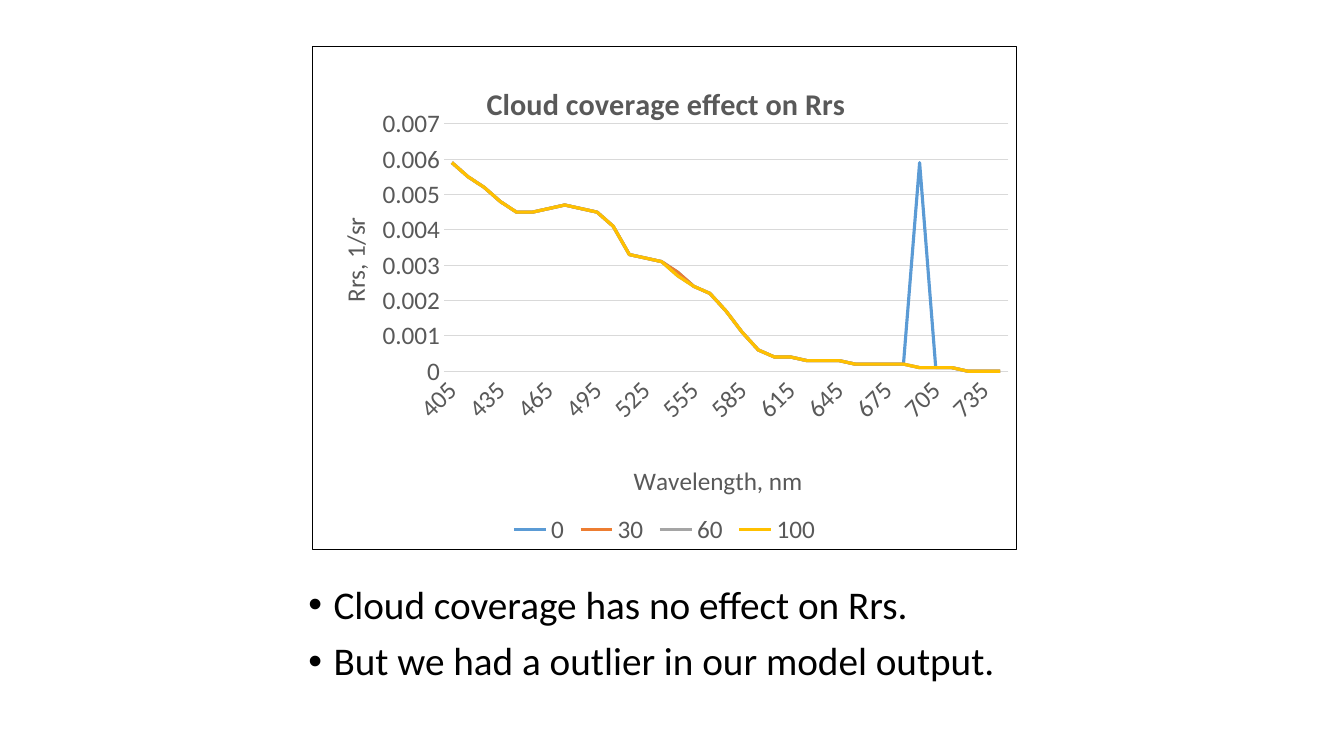
from dataclasses import dataclass

from lxml.etree import SubElement
from pptx import Presentation
from pptx.chart.data import CategoryChartData
from pptx.dml.color import RGBColor
from pptx.enum.chart import XL_CHART_TYPE as ChartType
from pptx.enum.chart import XL_LEGEND_POSITION as LegendPosition
from pptx.enum.chart import XL_TICK_MARK as TickMark
from pptx.oxml import parse_xml
from pptx.oxml.ns import nsdecls, qn
from pptx.util import Inches, Pt

BLACK = RGBColor(0x00, 0x00, 0x00)
GREY_TEXT = RGBColor(0x59, 0x59, 0x59)
GRID_GREY = RGBColor(0xD9, 0xD9, 0xD9)
BLUE = RGBColor(0x5B, 0x9B, 0xD5)
ORANGE = RGBColor(0xED, 0x7D, 0x31)
GREY = RGBColor(0xA5, 0xA5, 0xA5)
YELLOW = RGBColor(0xFF, 0xC0, 0x00)
FONT = "Calibri"

WAVELENGTHS = range(405, 746, 10)
# Rrs in units of 0.0001 1/sr
BASE_RRS = [59, 55, 52, 48, 45, 45, 46, 47, 46, 45, 41, 33, 32, 31, 28, 24, 22, 17,
            11, 6, 4, 4, 3, 3, 3, 2, 2, 2, 2, 1, 1, 1, 0, 0, 0]
BULLETS = [
    "Cloud coverage has no effect on Rrs.",
    "But we had a outlier in our model output.",
]


@dataclass(frozen=True)
class Coverage:
    percent: str
    color: RGBColor
    changes: dict[int, int]  # wavelength -> value differing from BASE_RRS

    def rrs(self) -> list[float]:
        return [round(self.changes.get(nm, base) / 10000, 4)
                for nm, base in zip(WAVELENGTHS, BASE_RRS)]


COVERAGES = [
    Coverage("0", BLUE, {695: 59}),
    Coverage("30", ORANGE, {}),
    Coverage("60", GREY, {545: 27}),
    Coverage("100", YELLOW, {545: 27}),
]


def style_font(font, size: float, color: RGBColor, bold: bool = False) -> None:
    font.name = FONT
    font.size = Pt(size)
    font.bold = bold
    font.color.rgb = color


def place(element, index: int, inner: bool = False, **fractions: float) -> None:
    """Give a chart part a manual layout in fractions of the chart."""
    for old in element.findall(qn("c:layout")):
        element.remove(old)
    layout = parse_xml(f"<c:layout {nsdecls('c')}><c:manualLayout/></c:layout>")
    manual = layout[0]
    if inner:
        SubElement(manual, qn("c:layoutTarget")).set("val", "inner")
    for side in ("x", "y"):
        SubElement(manual, qn(f"c:{side}Mode")).set("val", "edge")
    for side, fraction in fractions.items():
        SubElement(manual, qn(f"c:{side}")).set("val", str(fraction))
    element.insert(index, layout)


def add_title(owner, text: str, size: float, x: float, y: float,
              bold: bool = False, rotation: int = 0) -> None:
    """Title a chart or an axis; rotation is in degrees."""
    owner.has_title = True
    title = owner.chart_title if hasattr(owner, "chart_title") else owner.axis_title
    frame = title.text_frame
    run = frame.paragraphs[0].add_run()
    run.text = text
    style_font(run.font, size, GREY_TEXT, bold)
    body = title._element.find(f".//{qn('a:bodyPr')}")
    body.set("rot", str(rotation * 60000))
    body.set("vert", "horz")
    place(title._element, 1, x=x, y=y)


def add_border(chart, color: RGBColor) -> None:
    border = parse_xml(
        f"<c:spPr {nsdecls('c', 'a')}><a:noFill/><a:ln w=\"{Pt(0.75)}\"><a:solidFill>"
        f"<a:srgbClr val=\"{color}\"/></a:solidFill></a:ln></c:spPr>")
    chart._chartSpace.find(qn("c:chart")).addnext(border)


def add_rrs_chart(slide) -> None:
    data = CategoryChartData(number_format="General")
    data.categories = [str(nm) for nm in WAVELENGTHS]
    for coverage in COVERAGES:
        data.add_series(coverage.percent, coverage.rrs())
    chart = slide.shapes.add_chart(
        ChartType.LINE, Inches(3.09), Inches(0.46), Inches(7), Inches(5), data).chart
    style_font(chart.font, 18, BLACK)
    add_border(chart, BLACK)
    add_title(chart, "Cloud coverage effect on Rrs", 21.6, 0.24, 0.06, bold=True)

    plot = chart.plots[0]
    plot.vary_by_categories = False
    for series, coverage in zip(plot.series, COVERAGES):
        series.smooth = False
        series.format.line.color.rgb = coverage.color
        series.format.line.width = Pt(2.25)
    place(chart._chartSpace.find(f".//{qn('c:plotArea')}"), 0, inner=True,
          x=0.187, y=0.153, w=0.801, h=0.492)

    wavelength, rrs = chart.category_axis, chart.value_axis
    for axis in (wavelength, rrs):
        axis.major_tick_mark = axis.minor_tick_mark = TickMark.NONE
        style_font(axis.tick_labels.font, 18, GREY_TEXT)
    add_title(wavelength, "Wavelength, nm", 18, 0.45, 0.82)
    add_title(rrs, "Rrs, 1/sr", 18, 0.03, 0.33, rotation=-90)

    wavelength.format.line.color.rgb = GRID_GREY
    wavelength.format.line.width = Pt(0.75)
    labels = wavelength._element.find(f"{qn('c:txPr')}/{qn('a:bodyPr')}")
    labels.set("rot", str(-45 * 60000))
    labels.set("vert", "horz")
    skip = parse_xml(f"<c:tickLblSkip {nsdecls('c')} val=\"3\"/>")
    wavelength._element.find(qn("c:noMultiLvlLbl")).addprevious(skip)

    rrs.minimum_scale, rrs.maximum_scale, rrs.major_unit = 0, 0.007, 0.001
    rrs.format.line.fill.background()
    rrs.major_gridlines.format.line.color.rgb = GRID_GREY
    rrs.major_gridlines.format.line.width = Pt(0.75)

    chart.has_legend = True
    chart.legend.position = LegendPosition.BOTTOM
    chart.legend.include_in_layout = False
    style_font(chart.legend.font, 18, GREY_TEXT)


def add_findings(slide) -> None:
    findings = slide.shapes.add_textbox(
        Inches(2.96), Inches(5.76), Inches(7.49), Inches(1.11)).text_frame
    findings.word_wrap = True
    for number, bullet in enumerate(BULLETS):
        line = findings.add_paragraph() if number else findings.paragraphs[0]
        line.line_spacing = 0.9
        line.space_before = Pt(10)
        run = line.add_run()
        run.text = bullet
        style_font(run.font, 28, BLACK)
        properties = line._p.get_or_add_pPr()
        properties.set("marL", str(Inches(0.25)))
        properties.set("indent", str(Inches(-0.25)))
        SubElement(properties, qn("a:buFont")).set("typeface", "Arial")
        SubElement(properties, qn("a:buChar")).set("char", "•")


def main() -> None:
    deck = Presentation()
    deck.slide_width, deck.slide_height = Inches(13.33), Inches(7.5)
    slide = deck.slides.add_slide(deck.slide_layouts[6])
    add_findings(slide)
    add_rrs_chart(slide)
    deck.save("out.pptx")


if __name__ == "__main__":
    main()
